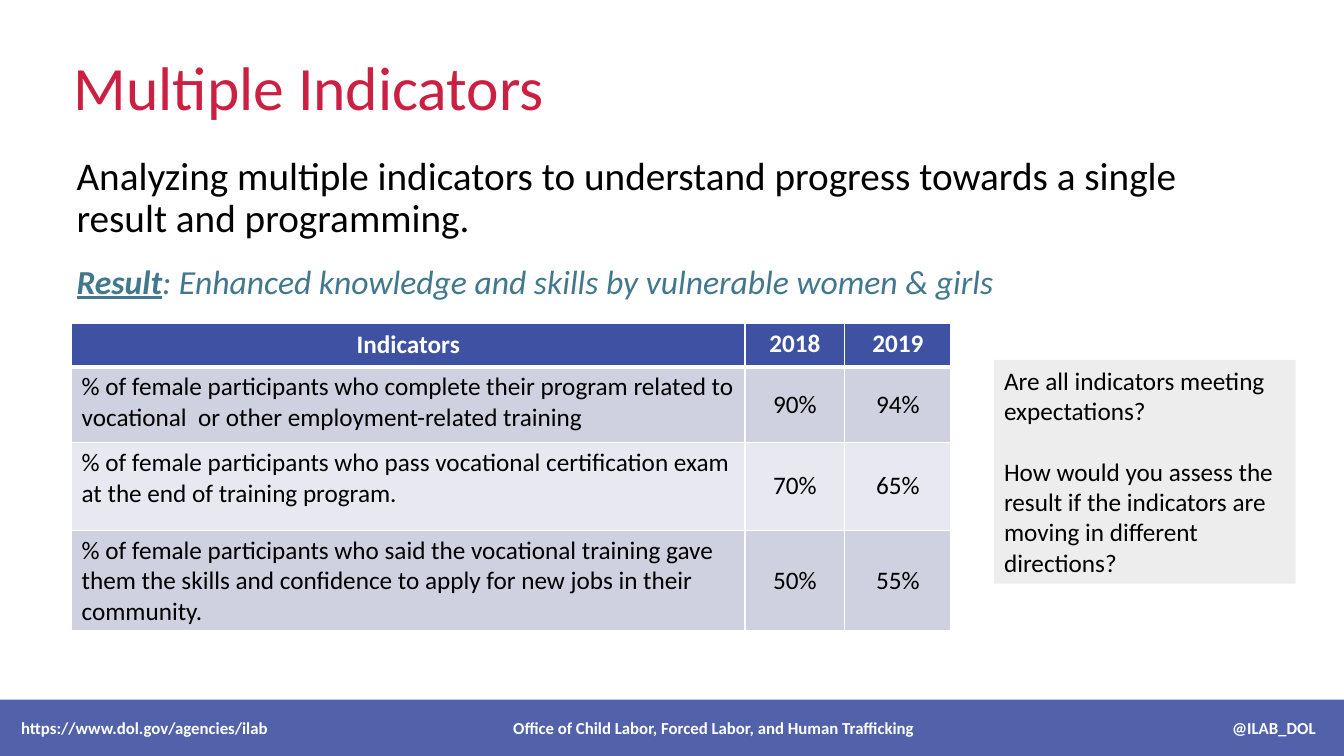
from lxml.etree import SubElement
from pptx import Presentation
from pptx.dml.color import RGBColor
from pptx.enum.shapes import MSO_SHAPE
from pptx.enum.text import MSO_ANCHOR, PP_ALIGN
from pptx.oxml.ns import qn
from pptx.util import Inches, Pt

COLORS = {
    "title": "CB2042",
    "text": "000000",
    "result": "41788D",
    "blue": "3F51A2",
    "band_dark": "CFD0E0",
    "band_light": "E8E9F0",
    "panel": "EDEDED",
    "white": "FFFFFF",
}


def add_span(para, text, color, size, **formats):
    span = para.add_run()
    span.text = text
    span.font.color.rgb = RGBColor.from_string(COLORS[color])
    for name, value in {"name": "Calibri", "size": Pt(size), **formats}.items():
        setattr(span.font, name, value)


def add_box(left, top, width, height, color):
    """Add a plain filled rectangle with left-aligned, wrapped text."""
    box = page.shapes.add_shape(
        MSO_SHAPE.RECTANGLE, Inches(left), Inches(top), Inches(width), Inches(height)
    )
    box.shadow.inherit = False
    box.fill.solid()
    box.fill.fore_color.rgb = RGBColor.from_string(COLORS[color])
    box.line.fill.background()
    box.text_frame.word_wrap = True
    box.text_frame.paragraphs[0].alignment = PP_ALIGN.LEFT
    return box


deck = Presentation()
deck.slide_width, deck.slide_height = Inches(13.33), Inches(7.5)
page = deck.slides.add_slide(deck.slide_layouts[5])

# Title
title = page.shapes.title
title.left, title.top = Inches(0.63), Inches(0.17)
title.width, title.height = Inches(11.5), Inches(1.45)
title.text_frame.vertical_anchor = MSO_ANCHOR.MIDDLE
para = title.text_frame.paragraphs[0]
para.alignment, para.line_spacing = PP_ALIGN.LEFT, 0.9
add_span(para, "Multiple Indicators", "title", 44)

# Introduction and result
intro = page.shapes.add_textbox(Inches(0.55), Inches(1.5), Inches(11.5), Inches(1.6))
frame = intro.text_frame
frame.word_wrap = True
frame.margin_left = Inches(0.21)
para = frame.paragraphs[0]
para.line_spacing, para.space_before = 0.9, Pt(6)
add_span(
    para,
    "Analyzing multiple indicators to understand progress towards a single "
    "result and programming.",
    "text", 28,
)
para = frame.add_paragraph()
para.line_spacing, para.space_before = 0.9, Pt(17.5)
add_span(para, "Result", "result", 24, bold=True, italic=True, underline=True)
add_span(
    para, ": Enhanced knowledge and skills by vulnerable women & girls",
    "result", 24, italic=True,
)

# Indicator table
ROWS = [
    ("Indicators", "2018", "2019"),
    ("% of female participants who complete their program related to "
     "vocational  or other employment-related training", "90%", "94%"),
    ("% of female participants who pass vocational certification exam "
     "at the end of training program.", "70%", "65%"),
    ("% of female participants who said the vocational training gave them "
     "the skills and confidence to apply for new jobs in their community.",
     "50%", "55%"),
]
COLUMN_WIDTHS = [6.68, 0.99, 1.05]
ROW_HEIGHTS = [0.43, 0.75, 0.87, 1.0]

table = page.shapes.add_table(
    len(ROWS), len(COLUMN_WIDTHS), Inches(0.71), Inches(3.21),
    Inches(sum(COLUMN_WIDTHS)), Inches(sum(ROW_HEIGHTS)),
).table
for column, width in zip(table.columns, COLUMN_WIDTHS):
    column.width = Inches(width)
for row, height in zip(table.rows, ROW_HEIGHTS):
    row.height = Inches(height)

for row_index, values in enumerate(ROWS):
    header = row_index == 0
    band = "blue" if header else "band_dark" if row_index % 2 else "band_light"
    for column_index, value in enumerate(values):
        cell = table.cell(row_index, column_index)
        label = column_index == 0
        if header == label:
            cell.vertical_anchor = MSO_ANCHOR.MIDDLE
        para = cell.text_frame.paragraphs[0]
        para.alignment = PP_ALIGN.CENTER if header or not label else PP_ALIGN.LEFT
        add_span(para, value, "white" if header else "text", 18, bold=header)

        # Borders precede the fill in the cell properties
        properties = cell._tc.get_or_add_tcPr()
        for side in ("L", "R", "T", "B"):
            thick = (header and side == "B") or (row_index == 1 and side == "T")
            line = SubElement(properties, qn(f"a:ln{side}"), w=str(Pt(3 if thick else 1)))
            fill = SubElement(line, qn("a:solidFill"))
            SubElement(fill, qn("a:srgbClr"), val=COLORS["white"])
        cell.fill.solid()
        cell.fill.fore_color.rgb = RGBColor.from_string(COLORS[band])

# Discussion questions
questions = add_box(9.86, 3.57, 2.99, 2.22, "panel")
frame = questions.text_frame
frame.vertical_anchor = MSO_ANCHOR.TOP
add_span(frame.paragraphs[0], "Are all indicators meeting expectations?", "text", 18)
para = frame.add_paragraph()
para.alignment, para.space_before = PP_ALIGN.LEFT, Pt(22)
add_span(
    para,
    "How would you assess the result if the indicators are moving in "
    "different directions?",
    "text", 18,
)

# Footer bar, with a centred and a right-aligned tab stop
footer = add_box(0, 6.94, 13.33, 0.56, "blue")
bar_color = footer.fill._xPr.find(qn("a:solidFill")).find(qn("a:srgbClr"))
SubElement(bar_color, qn("a:alpha"), val="90000")
footer.text_frame.vertical_anchor = MSO_ANCHOR.MIDDLE
footer.text_frame.margin_left = Inches(0.21)
para = footer.text_frame.paragraphs[0]
tabs = SubElement(para._p.get_or_add_pPr(), qn("a:tabLst"))
for position, alignment in ((6.87, "ctr"), (12.84, "r")):
    SubElement(tabs, qn("a:tab"), pos=str(Inches(position)), algn=alignment)
footer_parts = (
    "https://www.dol.gov/agencies/ilab",
    "Office of Child Labor, Forced Labor, and Human Trafficking",
    "@ILAB_DOL",
)
add_span(para, "\t".join(footer_parts), "white", 12, bold=True)

deck.save("out.pptx")
